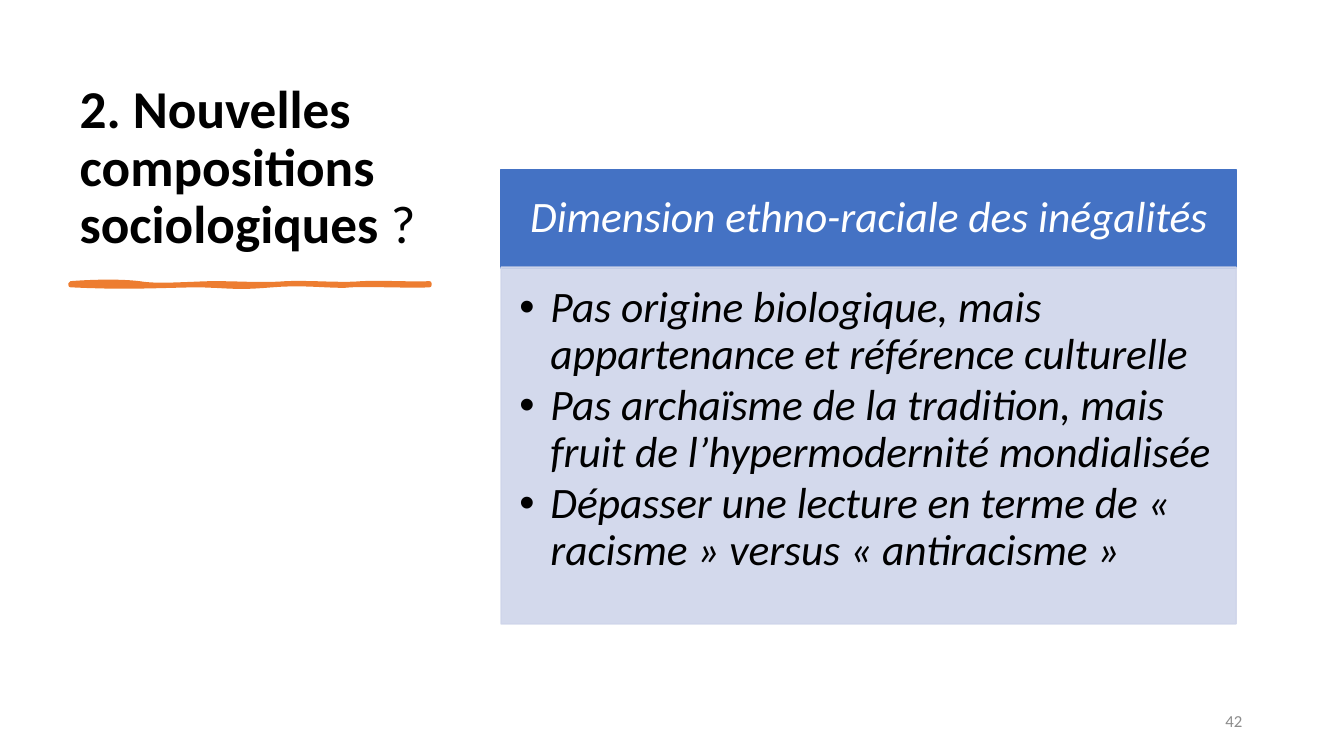
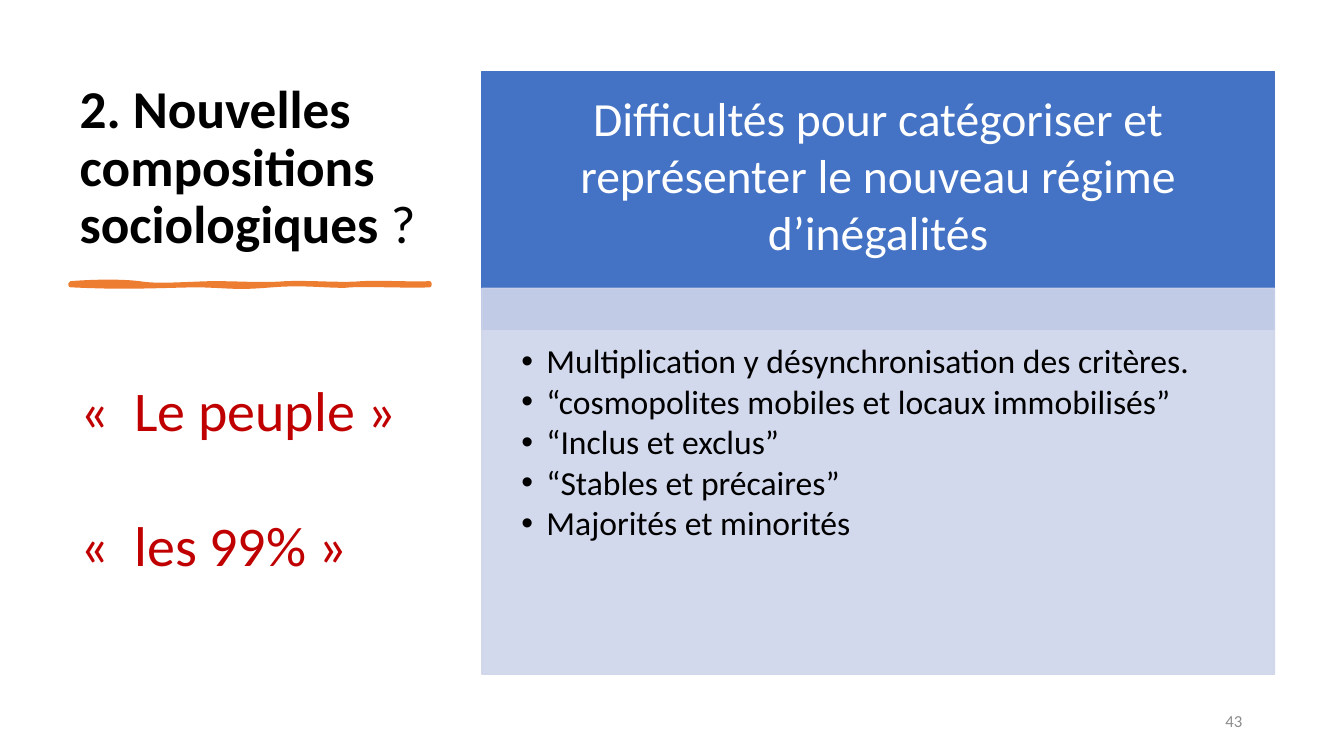
from dataclasses import dataclass

from lxml.etree import SubElement
from pptx import Presentation
from pptx.dml.color import RGBColor
from pptx.enum.shapes import MSO_SHAPE as Preset
from pptx.enum.text import MSO_ANCHOR as Anchor, MSO_AUTO_SIZE as AutoSize, PP_ALIGN as Align
from pptx.oxml.ns import qn
from pptx.util import Inches, Pt

FONT = "Calibri"
COLORS = {
    "ink": "000000",
    "paper": "FFFFFF",
    "stroke": "ED7D31",
    "header": "4472C4",
    "panel": "CFD5EA",
    "number": "8C8C8C",
    "quote": "C00000",
}
TITLE = ("2. Nouvelles compositions sociologiques", " ?")
STROKE_START = (0.7, 2.81)
STROKE_CURVES = [
    ((0.97, 2.79), (1.21, 2.79), (1.38, 2.81)),
    ((1.55, 2.84), (1.77, 2.82), (2.09, 2.81)),
    ((2.41, 2.81), (2.6, 2.83), (2.84, 2.81)),
    ((3.08, 2.8), (3.39, 2.83), (3.59, 2.81)),
    ((3.79, 2.8), (4.12, 2.82), (4.26, 2.81)),
    ((4.26, 2.82), (4.26, 2.83), (4.26, 2.83)),
    ((4.08, 2.84), (3.64, 2.82), (3.48, 2.83)),
    ((3.32, 2.85), (3.04, 2.8), (2.7, 2.83)),
    ((2.35, 2.86), (2.31, 2.84), (1.99, 2.83)),
    ((1.66, 2.83), (1.32, 2.86), (0.7, 2.83)),
]
CURVE_STEPS = 10


@dataclass(frozen=True)
class Block:
    top: float
    height: float
    size: int
    insets: tuple[float, float, float, float]


@dataclass(frozen=True)
class Topic:
    number: int
    left: float
    width: float
    header: Block
    heading: str
    panel: Block
    points: list[str]
    margin: float
    hanging: float
    italic: bool = False
    heading_spacing: float = 1.0
    quotes: tuple[str, ...] = ()


TOPICS = [
    Topic(
        number=42,
        left=4.97,
        width=7.29,
        header=Block(1.68, 0.98, 31, (0.24, 0.14, 0.24, 0.14)),
        heading="Dimension ethno-raciale des inégalités",
        panel=Block(2.65, 3.54, 31, (0.18, 0.18, 0.24, 0.27)),
        points=[
            "Pas origine biologique, mais appartenance et référence culturelle",
            "Pas archaïsme de la tradition, mais fruit de l’hypermodernité mondialisée",
            "Dépasser une lecture en terme de « racisme » versus « antiracisme »",
        ],
        margin=0.31,
        hanging=0.31,
        italic=True,
        heading_spacing=0.9,
    ),
    Topic(
        number=43,
        left=4.78,
        width=7.86,
        header=Block(0.71, 2.56, 34, (0.26, 0.15, 0.26, 0.67)),
        heading="Difficultés pour catégoriser et représenter le nouveau régime d’inégalités",
        panel=Block(2.86, 3.83, 24, (0.14, 0.56, 0.19, 0.21)),
        points=[
            "Multiplication y désynchronisation des critères.",
            "“cosmopolites mobiles et locaux immobilisés”",
            "“Inclus et exclus”",
            "“Stables et précaires”",
            "Majorités et minorités",
        ],
        margin=0.5,
        hanging=0.25,
        quotes=("«  Le peuple »", "«  les 99% »"),
    ),
]


def color(name: str) -> RGBColor:
    return RGBColor.from_string(COLORS[name])


def place(shape, left: float, top: float, width: float, height: float) -> None:
    shape.left, shape.top = Inches(left), Inches(top)
    shape.width, shape.height = Inches(width), Inches(height)


def paint(shape, name: str, line_width: float) -> None:
    shape.fill.solid()
    shape.fill.fore_color.rgb = color(name)
    shape.line.color.rgb = color(name)
    shape.line.width = Pt(line_width)


def set_font(paragraph, size: int, name: str, italic: bool = False) -> None:
    font = paragraph.font
    font.name, font.size, font.italic = FONT, Pt(size), italic
    font.color.rgb = color(name)


def set_frame(frame, anchor: Anchor, insets=(0.1, 0.05, 0.1, 0.05), wrap: bool = True) -> None:
    frame.auto_size = AutoSize.NONE
    frame.word_wrap = wrap
    frame.vertical_anchor = anchor
    (frame.margin_left, frame.margin_top,
     frame.margin_right, frame.margin_bottom) = map(Inches, insets)


def add_title(slide) -> None:
    title = slide.shapes.title
    place(title, 0.69, 0.7, 3.75, 1.88)
    set_frame(title.text_frame, Anchor.BOTTOM)
    paragraph = title.text_frame.paragraphs[0]
    paragraph.alignment = Align.LEFT
    paragraph.line_spacing = 0.9
    set_font(paragraph, 38, "ink")
    for words, bold in zip(TITLE, (True, False)):
        run = paragraph.add_run()
        run.text = words
        run.font.bold = bold


def add_stroke(slide) -> None:
    outline = []
    start = STROKE_START
    for first, second, end in STROKE_CURVES:
        for step in range(1, CURVE_STEPS + 1):
            t = step / CURVE_STEPS
            u = 1 - t
            outline.append(tuple(
                Inches(u**3 * a + 3 * u * u * t * b + 3 * u * t * t * c + t**3 * d)
                for a, b, c, d in zip(start, first, second, end)
            ))
        start = end
    builder = slide.shapes.build_freeform(*map(Inches, STROKE_START))
    builder.add_line_segments(outline, close=True)
    stroke = builder.convert_to_shape()
    stroke.shadow.inherit = False
    paint(stroke, "stroke", 3)


def add_number(slide, number: int) -> None:
    box = slide.shapes.add_textbox(Inches(9.42), Inches(6.95), Inches(3), Inches(0.4))
    set_frame(box.text_frame, Anchor.MIDDLE)
    paragraph = box.text_frame.paragraphs[0]
    paragraph.text = str(number)
    paragraph.alignment = Align.RIGHT
    set_font(paragraph, 12, "number")


def add_header(slide, topic: Topic):
    block = topic.header
    header = slide.shapes.add_shape(
        Preset.RECTANGLE, Inches(topic.left), Inches(block.top),
        Inches(topic.width), Inches(block.height))
    header.shadow.inherit = False
    paint(header, "header", 1)
    set_frame(header.text_frame, Anchor.MIDDLE, block.insets)
    paragraph = header.text_frame.paragraphs[0]
    paragraph.text = topic.heading
    paragraph.alignment = Align.CENTER
    paragraph.line_spacing = topic.heading_spacing
    set_font(paragraph, block.size, "paper", topic.italic)
    return header


def fill_panel(slide, topic: Topic, header) -> None:
    block = topic.panel
    panel = slide.placeholders[1]
    header.element.addnext(panel.element)
    place(panel, topic.left, block.top, topic.width, block.height)
    paint(panel, "panel", 1)
    for tint in list(panel.element.spPr.iter(qn("a:srgbClr"))):
        SubElement(tint, qn("a:alpha"), val="90000")
    frame = panel.text_frame
    set_frame(frame, Anchor.TOP, block.insets)
    frame.text = "\n".join(topic.points)
    for paragraph in frame.paragraphs:
        paragraph.line_spacing = 0.9
        paragraph.space_before, paragraph.space_after = Pt(0), Pt(3)
        set_font(paragraph, block.size, "ink", topic.italic)
        properties = paragraph._p.get_or_add_pPr()
        properties.set("marL", str(Inches(topic.margin)))
        properties.set("indent", str(-Inches(topic.hanging)))


def add_quotes(slide, quotes: tuple[str, ...]) -> None:
    box = slide.shapes.add_textbox(Inches(0.7), Inches(3.68), Inches(3.37), Inches(2.42))
    set_frame(box.text_frame, Anchor.TOP, wrap=False)
    box.text_frame.text = "\n".join(quotes)
    for paragraph in box.text_frame.paragraphs:
        paragraph.alignment = Align.LEFT
        paragraph.space_after = Pt(48)
        set_font(paragraph, 40, "quote")


def add_topic(deck, topic: Topic) -> None:
    slide = deck.slides.add_slide(deck.slide_layouts[1])
    add_title(slide)
    add_stroke(slide)
    add_number(slide, topic.number)
    header = add_header(slide, topic)
    fill_panel(slide, topic, header)
    if topic.quotes:
        add_quotes(slide, topic.quotes)


def main() -> None:
    deck = Presentation()
    deck.slide_width, deck.slide_height = Inches(13.33), Inches(7.5)
    for topic in TOPICS:
        add_topic(deck, topic)
    deck.save("out.pptx")


if __name__ == "__main__":
    main()
